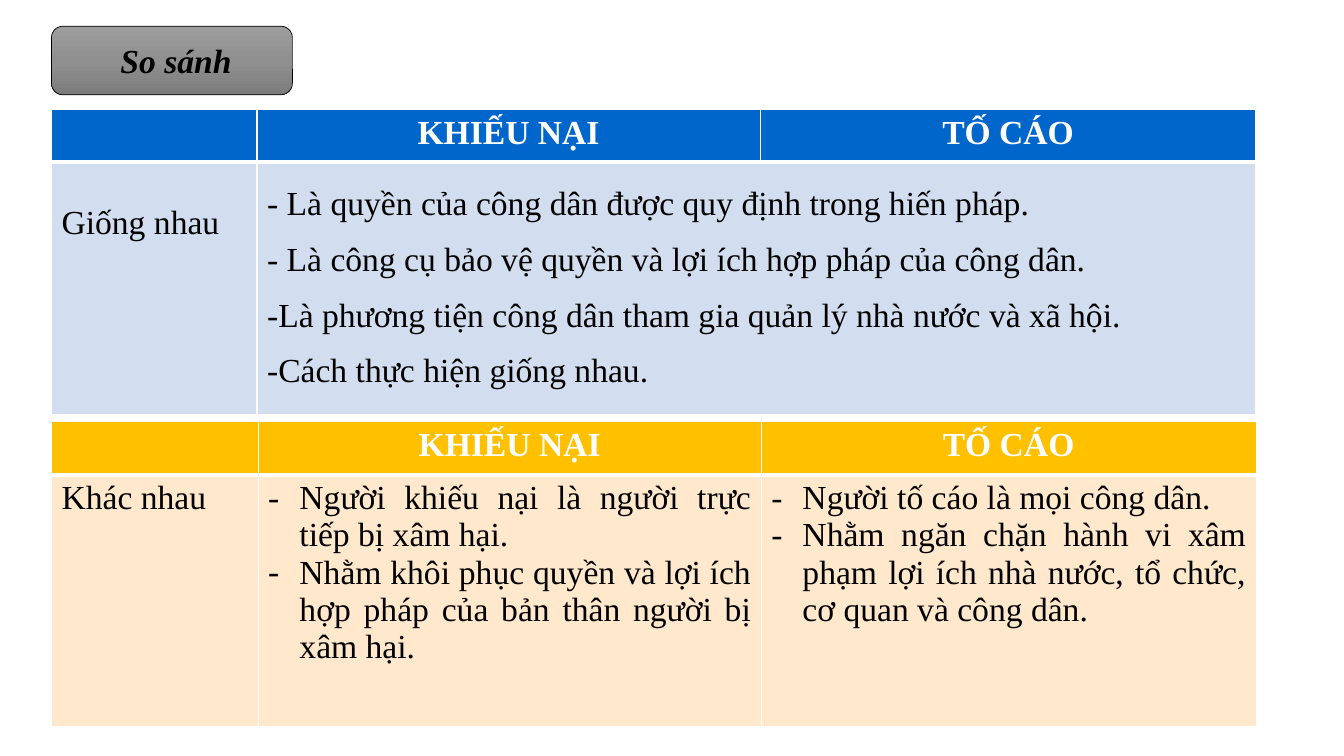
from copy import deepcopy
from dataclasses import dataclass

from lxml import etree
from pptx import Presentation
from pptx.dml.color import RGBColor
from pptx.enum.shapes import MSO_SHAPE
from pptx.enum.text import MSO_ANCHOR, PP_ALIGN
from pptx.oxml.ns import qn
from pptx.slide import Slide
from pptx.table import _Cell
from pptx.text.text import TextFrame, _Paragraph
from pptx.util import Emu, Inches, Pt

ROUNDED = MSO_SHAPE.ROUNDED_RECTANGLE
MIDDLE = MSO_ANCHOR.MIDDLE
CENTER = PP_ALIGN.CENTER
JUSTIFY = PP_ALIGN.JUSTIFY

SLIDE_WIDTH = Inches(13.333)
SLIDE_HEIGHT = Inches(7.5)


@dataclass(frozen=True)
class Theme:
    font: str = "Times New Roman"
    size: int = 24
    dark: str = "000000"
    light: str = "FFFFFF"
    blue: str = "0066CC"
    pale_blue: str = "D2DEEF"
    amber: str = "FFC000"
    pale_amber: str = "FFE8CB"
    tab_gradient: tuple[str, ...] = ("9D9D9D", "909090", "7C7C7C")
    outline: float = 0.5
    thin: float = 1
    thick: float = 3


@dataclass(frozen=True)
class Item:
    text: str
    bullet: bool = False


@dataclass(frozen=True)
class BodyCell:
    items: tuple[Item, ...]
    indent: float = 0
    spacing: float = 1
    top_margin: float = 0.05
    span: int = 1


@dataclass(frozen=True)
class Comparison:
    top: float
    widths: tuple[float, ...]
    heights: tuple[float, ...]
    header_fill: str
    body_fill: str
    body: tuple[BodyCell, ...]


THEME = Theme()
HEADINGS = ("", "KHIẾU NẠI", "TỐ CÁO")
LEFT = 3.83
HANGING = 0.31

COMPARISONS = (
    Comparison(14.53, (15.3, 37.43, 36.9), (6.93, 33.33), THEME.blue, THEME.pale_blue, (
        BodyCell((Item("Giống nhau"),), top_margin=0.42),
        BodyCell((
            Item("- Là quyền của công dân được quy định trong hiến pháp."),
            Item("- Là công cụ bảo vệ quyền và lợi ích hợp pháp của công dân."),
            Item("Là phương tiện công dân tham gia quản lý nhà nước và xã hội.", True),
            Item("Cách thực hiện giống nhau.", True),
        ), spacing=1.5, span=2),
    )),
    Comparison(55.73, (15.38, 37.43, 36.83), (7.07, 33.33), THEME.amber, THEME.pale_amber, (
        BodyCell((Item("Khác nhau"),)),
        BodyCell((
            Item("Người khiếu nại là người trực tiếp bị xâm hại.", True),
            Item("Nhằm khôi phục quyền và lợi ích hợp pháp của bản thân người bị xâm hại.", True),
        ), indent=HANGING),
        BodyCell((
            Item("Người tố cáo là mọi công dân.", True),
            Item("Nhằm ngăn chặn hành vi xâm phạm lợi ích nhà nước, tổ chức, cơ quan và công dân.", True),
        ), indent=HANGING),
    )),
)


def across(percent: float) -> Emu:
    return Emu(round(SLIDE_WIDTH * percent / 100))


def down(percent: float) -> Emu:
    return Emu(round(SLIDE_HEIGHT * percent / 100))


def color(value: str) -> RGBColor:
    return RGBColor.from_string(value)


def add_bullet(paragraph: _Paragraph, indent: float) -> None:
    properties = paragraph._p.get_or_add_pPr()
    properties.set("marL", str(Inches(indent)))
    properties.set("indent", str(-Inches(indent)))
    etree.SubElement(properties, qn("a:buFont"), typeface=THEME.font)
    etree.SubElement(properties, qn("a:buChar"), char="-")


def write_text(frame: TextFrame, items: tuple[Item, ...], *, text_color: str = THEME.dark,
               bold: bool = False, italic: bool = False, alignment: PP_ALIGN = JUSTIFY,
               spacing: float = 1, indent: float = 0) -> None:
    frame.word_wrap = True
    for index, item in enumerate(items):
        paragraph = frame.add_paragraph() if index else frame.paragraphs[0]
        paragraph.alignment = alignment
        paragraph.line_spacing = spacing
        if item.bullet:
            add_bullet(paragraph, indent)
        run = paragraph.add_run()
        run.text = item.text
        run.font.name = THEME.font
        run.font.size = Pt(THEME.size)
        run.font.bold = bold
        run.font.italic = italic
        run.font.color.rgb = color(text_color)


def style_cell(cell: _Cell, fill: str, top: float, bottom: float) -> None:
    cell.fill.solid()
    cell.fill.fore_color.rgb = color(fill)
    properties = cell._tc.get_or_add_tcPr()
    sides = (("L", THEME.thin), ("R", THEME.thin), ("T", top), ("B", bottom))
    for index, (side, width) in enumerate(sides):
        border = etree.Element(qn(f"a:ln{side}"), w=str(Pt(width)))
        solid = etree.SubElement(border, qn("a:solidFill"))
        etree.SubElement(solid, qn("a:srgbClr"), val=THEME.light)
        properties.insert(index, border)


def add_tab(slide: Slide) -> None:
    shape = slide.shapes.add_shape(ROUNDED, across(LEFT), down(3.47), across(17.93), down(9.07))
    shape.shadow.inherit = False
    shape.fill.gradient()
    shape.fill.gradient_angle = 270
    stop_list = shape._element.spPr.find(qn("a:gradFill")).find(qn("a:gsLst"))
    stop_list.insert(1, deepcopy(stop_list[0]))
    for index, value in enumerate(THEME.tab_gradient):
        stop = shape.fill.gradient_stops[index]
        stop.position = index / 2
        stop.color.rgb = color(value)
    shape.line.color.rgb = color(THEME.dark)
    shape.line.width = Pt(THEME.outline)
    shape.text_frame.vertical_anchor = MIDDLE
    shape.text_frame.margin_left = Inches(0.18)
    write_text(shape.text_frame, (Item("So sánh"),), bold=True, italic=True, alignment=CENTER)


def add_comparison(slide: Slide, comparison: Comparison) -> None:
    table = slide.shapes.add_table(
        len(comparison.heights), len(comparison.widths), across(LEFT), down(comparison.top),
        across(sum(comparison.widths)), down(sum(comparison.heights))).table
    table.first_row = False
    table.horz_banding = False
    for column, width in zip(table.columns, comparison.widths):
        column.width = across(width)
    for row, height in zip(table.rows, comparison.heights):
        row.height = down(height)
    for index, heading in enumerate(HEADINGS):
        header = table.cell(0, index)
        style_cell(header, comparison.header_fill, THEME.thin, THEME.thick)
        style_cell(table.cell(1, index), comparison.body_fill, THEME.thick, THEME.thin)
        if heading:
            write_text(header.text_frame, (Item(heading),), text_color=THEME.light,
                       bold=True, alignment=CENTER)
    for index, body in enumerate(comparison.body):
        cell = table.cell(1, index)
        if body.span > 1:
            cell.merge(table.cell(1, index + body.span - 1))
        cell.margin_top = Inches(body.top_margin)
        write_text(cell.text_frame, body.items, spacing=body.spacing, indent=body.indent)


def main() -> None:
    presentation = Presentation()
    presentation.slide_width = SLIDE_WIDTH
    presentation.slide_height = SLIDE_HEIGHT
    slide = presentation.slides.add_slide(presentation.slide_layouts[6])
    add_tab(slide)
    for comparison in COMPARISONS:
        add_comparison(slide, comparison)
    presentation.save("out.pptx")


if __name__ == "__main__":
    main()
